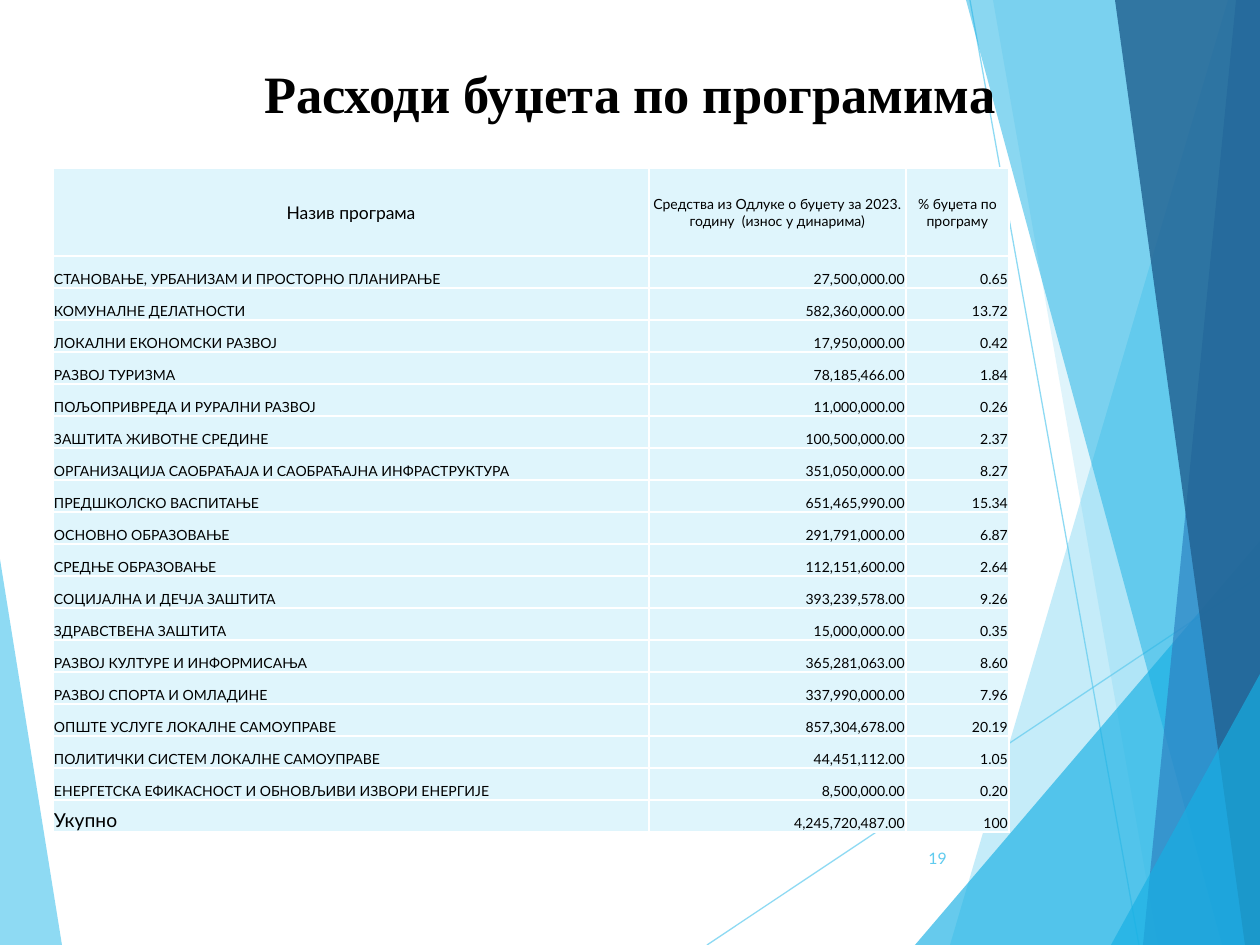
"""Build the slide of budget spending by programme."""
from dataclasses import dataclass
from typing import NamedTuple

from lxml.etree import SubElement as Sub
from pptx import Presentation
from pptx.dml.color import RGBColor as Rgb
from pptx.enum.shapes import MSO_CONNECTOR as Link
from pptx.enum.text import MSO_ANCHOR as Anchor, MSO_AUTO_SIZE as Fit, PP_ALIGN as Align
from pptx.oxml.ns import qn
from pptx.util import Emu, Pt

SCALE = 914400 / 126
WIDE, HIGH = 1260, 945


@dataclass(frozen=True)
class Theme:
    sky: str = "5FCBEF"
    cyan: str = "17B0E4"
    blue: str = "2E83C3"
    navy: str = "226292"
    pale: str = "DFF5FC"
    ink: str = "000000"
    rule: str = "FFFFFF"
    sans: str = "Lato"
    serif: str = "Times New Roman"
    title: int = 30
    total: int = 11
    head: int = 10
    page: int = 9
    body: int = 8


class Facet(NamedTuple):
    points: list[tuple[int, int]]
    color: str
    alpha: int


class Ray(NamedTuple):
    start: tuple[int, int]
    end: tuple[int, int]


class Row(NamedTuple):
    name: str
    sum: str
    share: str


LOOK = Theme()


def band(top: int, foot: int, color: str, alpha: int) -> Facet:
    """Describe a facet that runs from a slanted edge to the right side."""
    return Facet([(top, 0), (foot, HIGH), (WIDE, HIGH), (WIDE, 0)], color, alpha)


def wedge(left: int, top: int) -> Facet:
    """Describe a triangle in the lower right corner."""
    return Facet([(left, HIGH), (WIDE, top), (WIDE, HIGH)], LOOK.cyan, 66)


EDGE = Facet([(0, 559), (62, HIGH), (0, HIGH)], LOOK.sky, 70)
RAYS = [Ray((707, HIGH), (WIDE, 576)), Ray((970, 0), (1139, HIGH))]
FACETS = [
    band(1228, 950, LOOK.sky, 36),
    band(993, 1158, LOOK.sky, 20),
    wedge(915, 541),
    band(966, 1222, LOOK.cyan, 50),
    band(1236, 1143, LOOK.blue, 70),
    band(1115, 1245, LOOK.navy, 82),
    wedge(1111, 674),
]
COLS = [596, 257, 103]
HEAD, STEP = 88, 32
ROWS = [
    Row("Назив програма", "Средства из Одлуке о буџету за 2023. годину  (износ у динарима)",
        "% буџета по програму"),
    Row("СТАНОВАЊЕ, УРБАНИЗАМ И ПРОСТОРНО ПЛАНИРАЊЕ", "27,500,000.00", "0.65"),
    Row("КОМУНАЛНЕ ДЕЛАТНОСТИ", "582,360,000.00", "13.72"),
    Row("ЛОКАЛНИ ЕКОНОМСКИ РАЗВОЈ", "17,950,000.00", "0.42"),
    Row("РАЗВОЈ ТУРИЗМА", "78,185,466.00", "1.84"),
    Row("ПОЉОПРИВРЕДА И РУРАЛНИ РАЗВОЈ", "11,000,000.00", "0.26"),
    Row("ЗАШТИТА ЖИВОТНЕ СРЕДИНЕ", "100,500,000.00", "2.37"),
    Row("ОРГАНИЗАЦИЈА САОБРАЋАЈА И САОБРАЋАЈНА ИНФРАСТРУКТУРА", "351,050,000.00", "8.27"),
    Row("ПРЕДШКОЛСКО ВАСПИТАЊЕ", "651,465,990.00", "15.34"),
    Row("ОСНОВНО ОБРАЗОВАЊЕ", "291,791,000.00", "6.87"),
    Row("СРЕДЊЕ ОБРАЗОВАЊЕ", "112,151,600.00", "2.64"),
    Row("СОЦИЈАЛНА И ДЕЧЈА ЗАШТИТА", "393,239,578.00", "9.26"),
    Row("ЗДРАВСТВЕНА ЗАШТИТА", "15,000,000.00", "0.35"),
    Row("РАЗВОЈ КУЛТУРЕ И ИНФОРМИСАЊА", "365,281,063.00", "8.60"),
    Row("РАЗВОЈ СПОРТА И ОМЛАДИНЕ", "337,990,000.00", "7.96"),
    Row("ОПШТЕ УСЛУГЕ ЛОКАЛНЕ САМОУПРАВЕ", "857,304,678.00", "20.19"),
    Row("ПОЛИТИЧКИ СИСТЕМ ЛОКАЛНЕ САМОУПРАВЕ", "44,451,112.00", "1.05"),
    Row("ЕНЕРГЕТСКА ЕФИКАСНОСТ И ОБНОВЉИВИ ИЗВОРИ ЕНЕРГИЈЕ", "8,500,000.00", "0.20"),
    Row("Укупно", "4,245,720,487.00", "100"),
]


def px(size: int) -> Emu:
    """Turn pixels into EMU."""
    return Emu(round(size * SCALE))


def write(frame, text: str, *, size: int, font: str = LOOK.sans, color: str = LOOK.ink,
          bold: bool = False, align: Align = Align.LEFT) -> None:
    """Put one formatted paragraph into a text frame."""
    frame.word_wrap = True
    para = frame.paragraphs[0]
    para.alignment = align
    run = para.add_run()
    run.text = text
    run.font.size, run.font.name, run.font.bold = Pt(size), font, bold
    run.font.color.rgb = Rgb.from_string(color)


def fade(shape, alpha: int) -> None:
    """Set the opacity of a shape's only direct colour, in percent."""
    tone = shape._element.spPr.find(".//" + qn("a:srgbClr"))
    Sub(tone, qn("a:alpha")).set("val", str(alpha * 1000))


def draw_facet(shapes, facet: Facet) -> None:
    """Draw a translucent polygon."""
    pen = shapes.build_freeform(*facet.points[0], scale=SCALE)
    pen.add_line_segments(facet.points[1:], close=True)
    shape = pen.convert_to_shape()
    shape.shadow.inherit = False
    shape.fill.solid()
    shape.fill.fore_color.rgb = Rgb.from_string(facet.color)
    fade(shape, facet.alpha)
    shape.line.fill.background()


def draw_ray(shapes, ray: Ray) -> None:
    """Draw a thin translucent line."""
    line = shapes.add_connector(Link.STRAIGHT, *map(px, ray.start + ray.end))
    line.line.width = Pt(0.75)
    line.line.color.rgb = Rgb.from_string(LOOK.sky)
    fade(line, 70)
    Sub(line._element.spPr, qn("a:effectLst"))


def style_cell(cell) -> None:
    """Give a cell its margins, white borders and pale fill."""
    cell.margin_left = cell.margin_right = cell.margin_top = px(1)
    cell.margin_bottom = 0
    props = cell._tc.get_or_add_tcPr()
    for side in ("lnL", "lnR", "lnT", "lnB"):
        edge = Sub(props, qn(f"a:{side}"), w=str(Pt(1)))
        Sub(Sub(edge, qn("a:solidFill")), qn("a:srgbClr"), val=LOOK.rule)
    cell.fill.solid()
    cell.fill.fore_color.rgb = Rgb.from_string(LOOK.pale)


def draw_table(shapes) -> None:
    """Draw the table of programmes."""
    last = len(ROWS) - 1
    table = shapes.add_table(len(ROWS), len(COLS), px(53), px(168), px(sum(COLS)),
                             px(HEAD + STEP * last)).table
    table.first_row = table.horz_banding = False
    for col, width in zip(table.columns, COLS):
        col.width = px(width)
    sizes = {(0, 0): LOOK.head, (last, 0): LOOK.total}
    for i, row in enumerate(ROWS):
        table.rows[i].height = px(STEP if i else HEAD)
        for j, text in enumerate(row):
            cell = table.cell(i, j)
            style_cell(cell)
            cell.vertical_anchor = Anchor.BOTTOM if i else Anchor.MIDDLE
            align = Align.CENTER if i == 0 else Align.RIGHT if j else Align.LEFT
            write(cell.text_frame, text, size=sizes.get((i, j), LOOK.body), align=align)


def main() -> None:
    """Build and save the slide."""
    deck = Presentation()
    deck.slide_width, deck.slide_height = px(WIDE), px(HIGH)
    slide = deck.slides.add_slide(deck.slide_layouts[5])
    shapes = slide.shapes
    draw_facet(shapes, EDGE)
    for ray in RAYS:
        draw_ray(shapes, ray)
    for facet in FACETS:
        draw_facet(shapes, facet)
    page = shapes.add_textbox(px(888), px(833), px(71), px(50)).text_frame
    page.vertical_anchor = Anchor.MIDDLE
    write(page, "19", size=LOOK.page, color=LOOK.sky, align=Align.RIGHT)
    title = shapes.title
    title.left, title.top, title.width, title.height = map(px, (105, 53, 1050, 77))
    title.text_frame.auto_size = Fit.NONE
    title.text_frame.vertical_anchor = Anchor.BOTTOM
    write(title.text_frame, "Расходи буџета по програмима", size=LOOK.title,
          font=LOOK.serif, bold=True, align=Align.CENTER)
    shapes._spTree.append(title._element)
    draw_table(shapes)
    deck.save("out.pptx")


if __name__ == "__main__":
    main()
